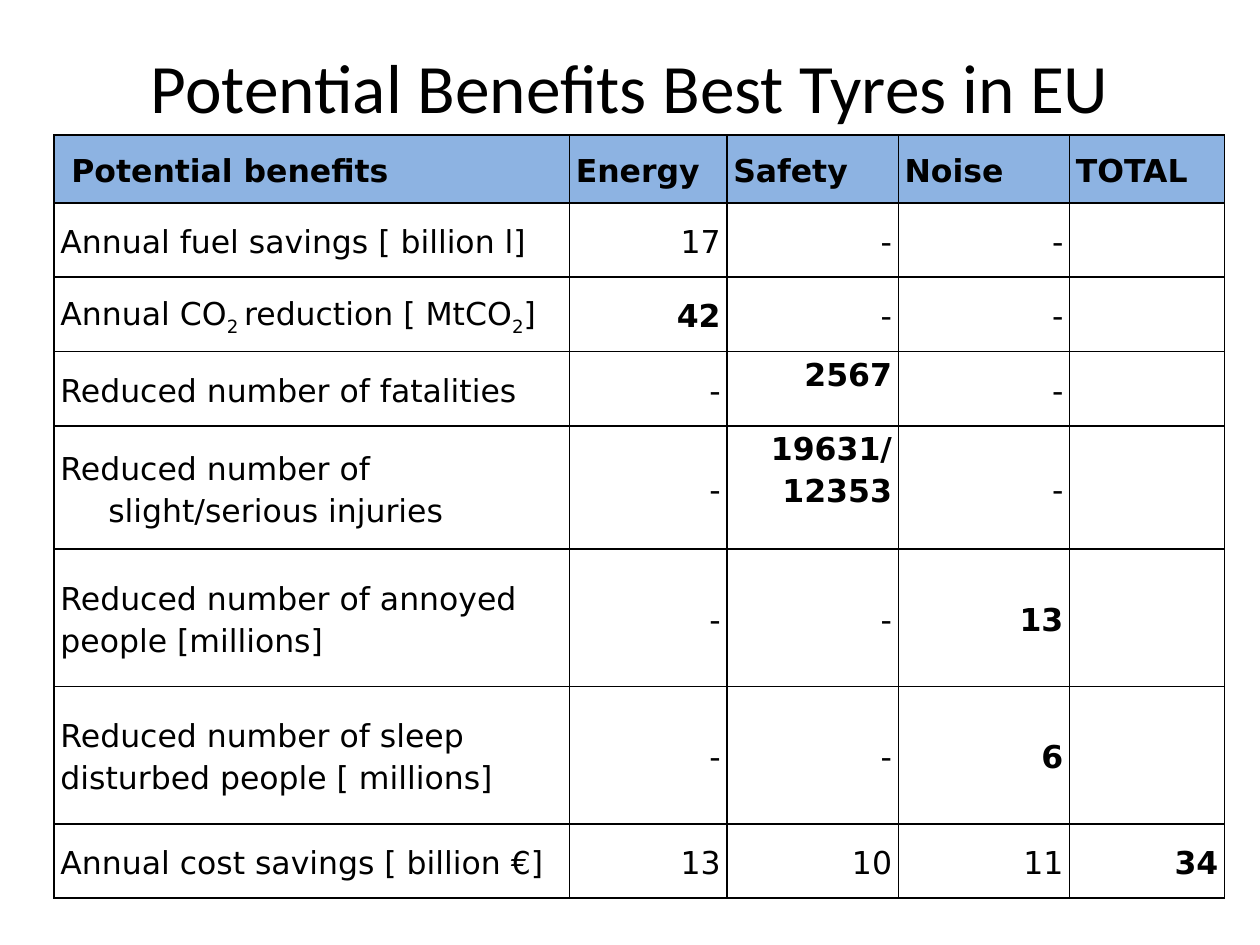
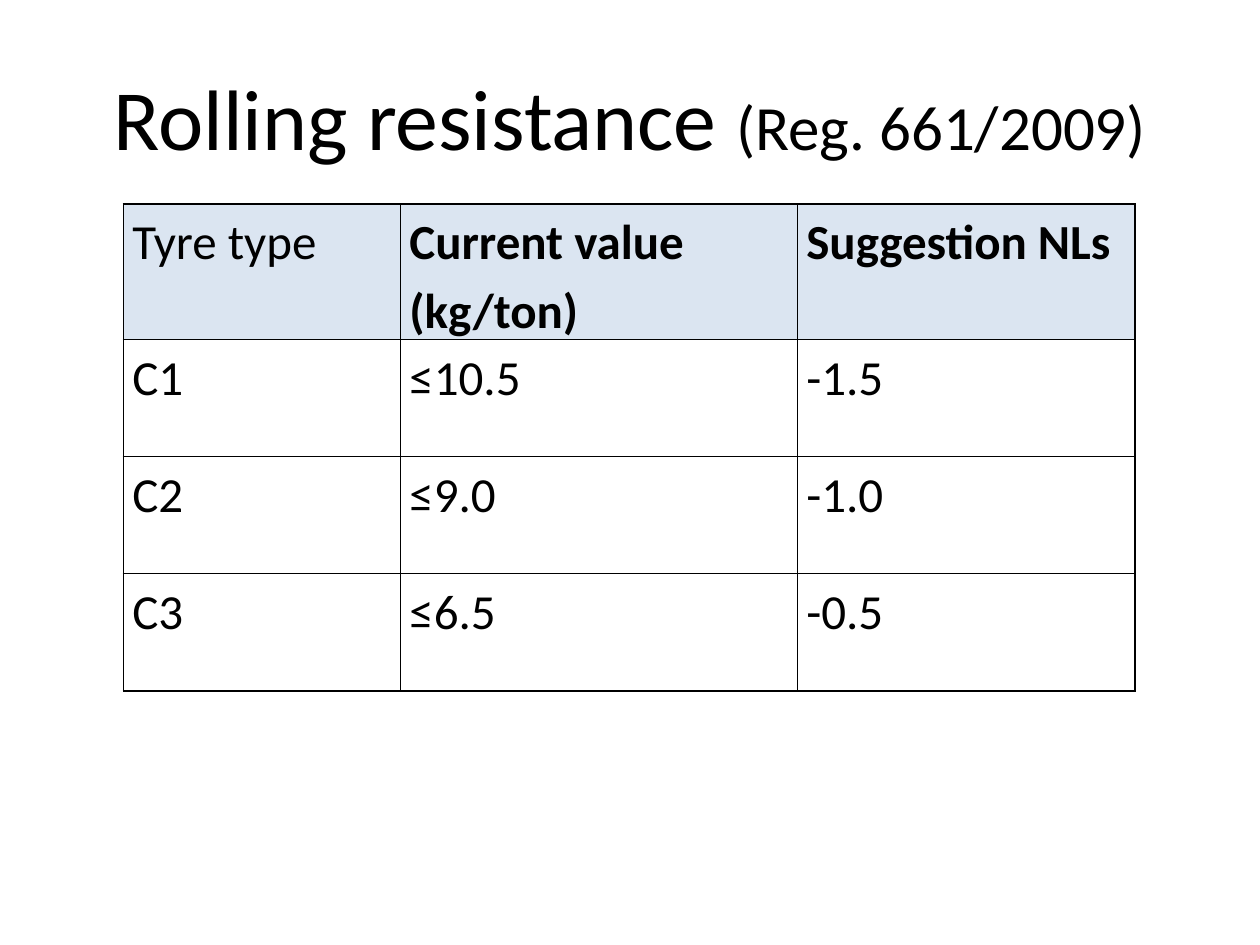
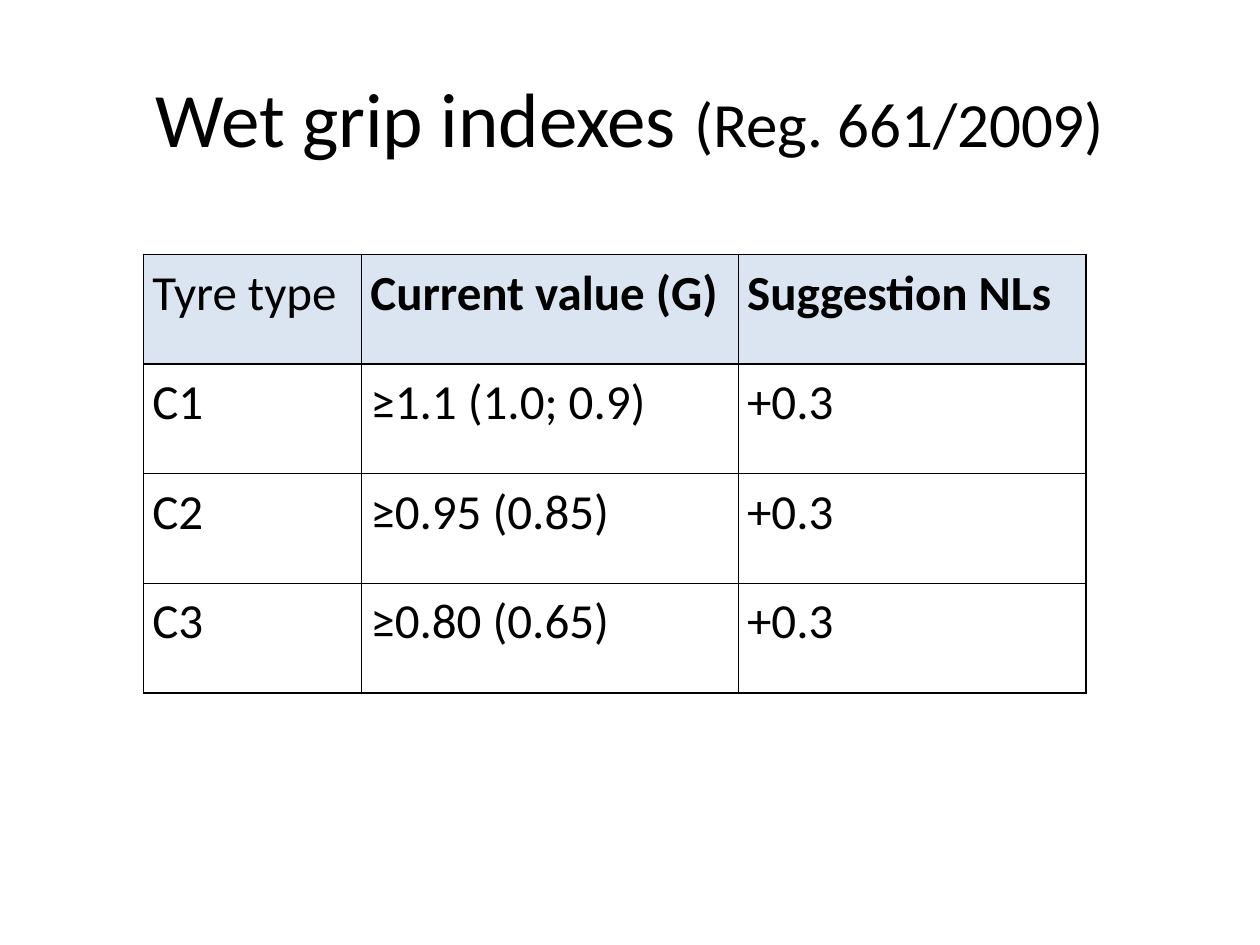
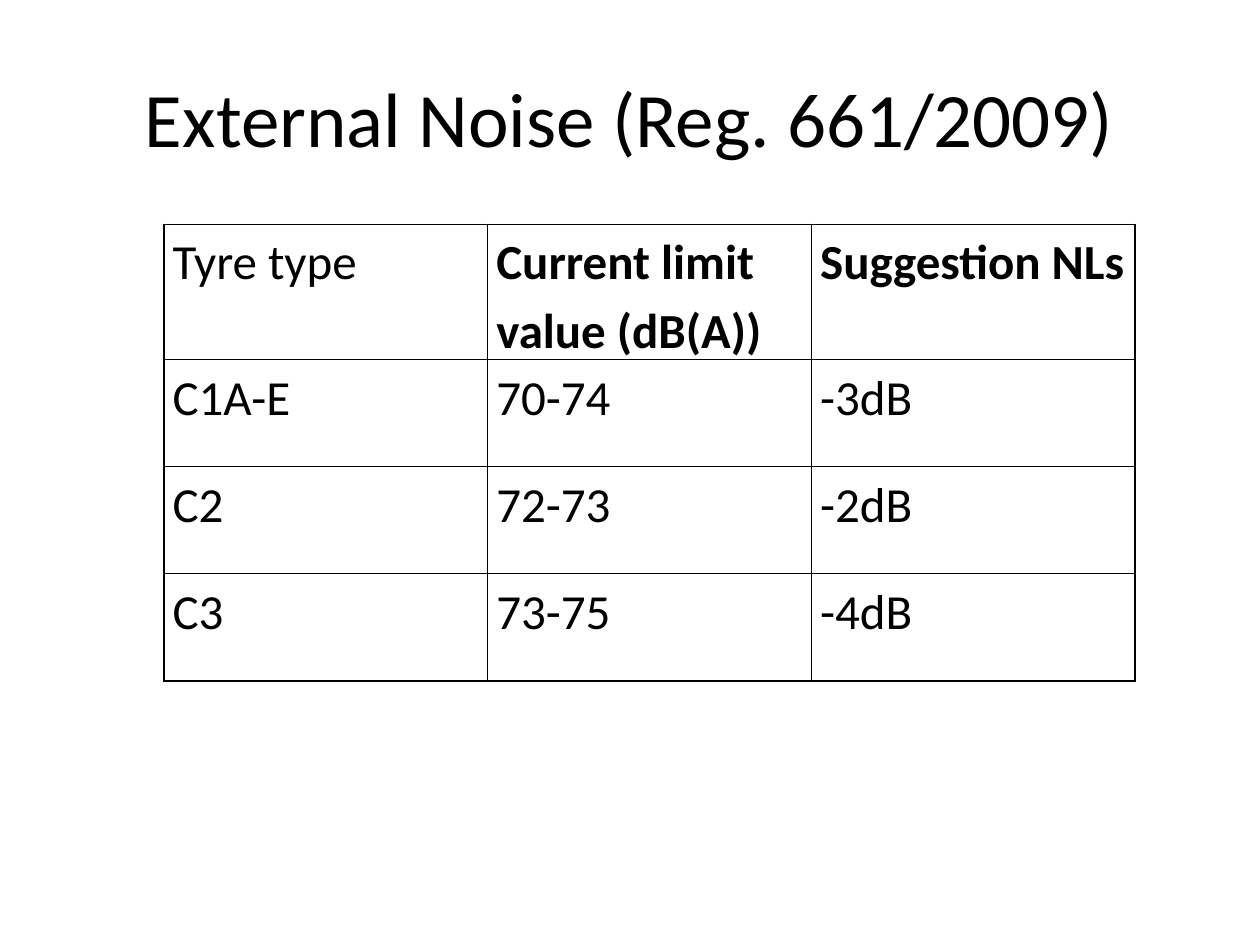
import pptx
import pptx.dml.color
import pptx.enum.text
import pptx.oxml
import pptx.oxml.ns
import pptx.util

Inches = pptx.util.Inches
Pt = pptx.util.Pt
RGBColor = pptx.dml.color.RGBColor
ALIGN = pptx.enum.text.PP_ALIGN
ANCHOR = pptx.enum.text.MSO_ANCHOR

# Shared look
BLACK = RGBColor(0x00, 0x00, 0x00)
HEADER_BLUE = RGBColor(0x8D, 0xB3, 0xE2)
HEADER_PALE = RGBColor(0xDB, 0xE5, 0xF1)
TITLE_FONT = "Calibri"
BENEFITS_FONT = "DejaVu Sans"
REGULATION = "(Reg. 661/2009)"

# Benefits table: text between ~ marks is subscript
BENEFITS = [
    [" Potential benefits", "Energy", "Safety", "Noise", "TOTAL"],
    ["Annual fuel savings [ billion l]", "17", "-", "-", ""],
    ["Annual CO~2 ~reduction [ MtCO~2~]", "42", "-", "-", ""],
    ["Reduced number of fatalities", "-", "2567", "-", ""],
    ["Reduced number of slight/serious injuries", "-", "19631/\n12353", "-", ""],
    ["Reduced number of annoyed people [millions]", "-", "-", "13", ""],
    ["Reduced number of sleep disturbed people [ millions]", "-", "-", "6", ""],
    ["Annual cost savings [ billion €]", "13", "10", "11", "34"],
]
KEY_FIGURES = {(2, 1), (3, 2), (4, 2), (5, 3), (6, 3), (7, 4)}
TOP_FIGURES = {(3, 2), (4, 2)}
INJURIES_ROW = 4


def add_slide(presentation):
    return presentation.slides.add_slide(presentation.slide_layouts[6])


def add_title(slide, parts, height=1.25):
    """Add a centred title from (text, size) parts."""
    box = slide.shapes.add_textbox(Inches(0.5), Inches(0.3), Inches(9), Inches(height))
    frame = box.text_frame
    frame.word_wrap = True
    frame.vertical_anchor = ANCHOR.MIDDLE
    paragraph = frame.paragraphs[0]
    paragraph.alignment = ALIGN.CENTER
    paragraph.font.name = TITLE_FONT
    paragraph.font.color.rgb = BLACK
    for text, size in parts:
        run = paragraph.add_run()
        run.text = text
        run.font.size = Pt(size)


def add_borders(cell):
    properties = cell._tc.get_or_add_tcPr()
    for side in ("lnL", "lnR", "lnT", "lnB"):
        properties.append(pptx.oxml.parse_xml(
            f'<a:{side} {pptx.oxml.ns.nsdecls("a")} w="12700"><a:solidFill>'
            f'<a:srgbClr val="{BLACK}"/></a:solidFill></a:{side}>'))


def write_paragraph(paragraph, text, font_name, size, bold):
    paragraph.line_spacing = 1.15
    paragraph.font.name = font_name
    paragraph.font.size = Pt(size)
    paragraph.font.bold = bold
    paragraph.font.color.rgb = BLACK
    for index, part in enumerate(text.split("~")):
        if part:
            run = paragraph.add_run()
            run.text = part
            if index % 2:
                run._r.get_or_add_rPr().set("baseline", "-25000")


def write_cell(cell, text, font_name, size, bold, margin, fill):
    cell.margin_left = cell.margin_right = Inches(margin)
    cell.margin_top = cell.margin_bottom = 0
    add_borders(cell)
    if fill is None:
        cell.fill.background()
    else:
        cell.fill.solid()
        cell.fill.fore_color.rgb = fill
    frame = cell.text_frame
    for index, line in enumerate(text.split("\n")):
        paragraph = frame.add_paragraph() if index else frame.paragraphs[0]
        write_paragraph(paragraph, line, font_name, size, bold)


def add_table(slide, left, top, widths, heights, rows, bold_cells, header_fill,
              font_name=TITLE_FONT, size=28, margin=0.07):
    """Add a bordered table whose first row is the header."""
    table = slide.shapes.add_table(
        len(rows), len(widths), Inches(left), Inches(top),
        Inches(sum(widths)), Inches(sum(heights))).table
    table.first_row = False
    table.horz_banding = False
    for column, width in zip(table.columns, widths):
        column.width = Inches(width)
    for row, height in zip(table.rows, heights):
        row.height = Inches(height)
    for row_index, texts in enumerate(rows):
        fill = header_fill if row_index == 0 else None
        for column_index, text in enumerate(texts):
            write_cell(table.cell(row_index, column_index), text, font_name, size,
                       (row_index, column_index) in bold_cells, margin, fill)
    return table


def add_benefits_table(slide):
    header_cells = {(0, column) for column in range(5)}
    table = add_table(
        slide, 0.43, 1.07, [4.09, 1.25, 1.36, 1.36, 1.23],
        [0.54, 0.59, 0.59, 0.59, 0.98, 1.09, 1.09, 0.59], BENEFITS,
        header_cells | KEY_FIGURES, HEADER_BLUE, BENEFITS_FONT, 18, 0.05)
    for row in range(len(BENEFITS)):
        for column in range(5):
            cell = table.cell(row, column)
            if (row, column) not in TOP_FIGURES:
                cell.vertical_anchor = ANCHOR.MIDDLE
            if row and column:
                for paragraph in cell.text_frame.paragraphs:
                    paragraph.alignment = ALIGN.RIGHT
    # Hanging indent for the wrapped injuries label
    label = table.cell(INJURIES_ROW, 0).text_frame.paragraphs[0]
    properties = label._p.get_or_add_pPr()
    properties.set("marL", str(Inches(0.38)))
    properties.set("indent", str(Inches(-0.38)))


def add_limits_slide(presentation, title, left, top, widths, row_height,
                     value_heading, limits, header_fill=HEADER_PALE):
    """Add a slide comparing current limits with the suggested change."""
    slide = add_slide(presentation)
    add_title(slide, title)
    rows = [["Tyre type", value_heading, "Suggestion NLs"]] + limits
    add_table(slide, left, top, widths, [row_height] * len(rows), rows,
              {(0, 1), (0, 2)}, header_fill)


def main():
    presentation = pptx.Presentation()
    presentation.slide_width = Inches(10)
    presentation.slide_height = Inches(7.5)

    # Potential benefits
    slide = add_slide(presentation)
    add_benefits_table(slide)
    add_title(slide, [("Potential Benefits Best Tyres in EU", 39.6)], 0.77)

    # Rolling resistance
    add_limits_slide(
        presentation, [("Rolling resistance ", 49), (REGULATION, 36)],
        0.98, 1.62, [2.2, 3.15, 2.68], 0.93, "Current value (kg/ton)",
        [["C1", "≤10.5", "-1.5"], ["C2", "≤9.0", "-1.0"], ["C3", "≤6.5", "-0.5"]])

    # Wet grip
    add_limits_slide(
        presentation, [("Wet grip indexes ", 44), (REGULATION, 36)],
        1.14, 2.02, [1.73, 2.99, 2.76], 0.87, "Current value (G)",
        [["C1", "≥1.1 (1.0; 0.9)", "+0.3"], ["C2", "≥0.95 (0.85)", "+0.3"],
         ["C3", "≥0.80 (0.65)", "+0.3"]])

    # External noise
    add_limits_slide(
        presentation, [("External Noise " + REGULATION, 44)],
        1.3, 1.78, [2.57] * 3, 0.85, "Current limit value (dB(A))",
        [["C1A-E", "70-74", "-3dB"], ["C2", "72-73", "-2dB"], ["C3", "73-75", "-4dB"]],
        header_fill=None)

    presentation.save("out.pptx")


if __name__ == "__main__":
    main()
